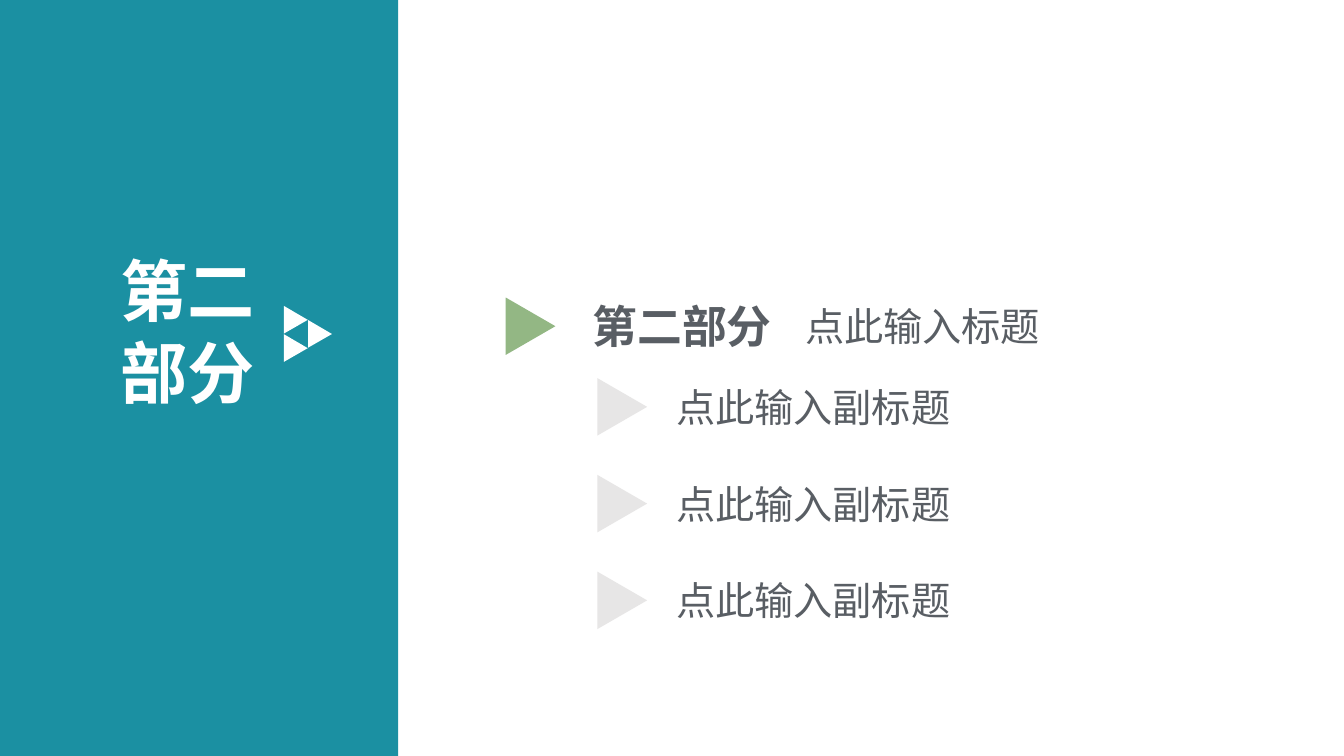
import pptx
import pptx.util
import pptx.dml.color
import pptx.enum.shapes
import pptx.enum.text
import lxml.etree

Pt = pptx.util.Pt
Color = pptx.dml.color.RGBColor
Kind = pptx.enum.shapes.MSO_SHAPE

TEAL = Color(0x1B, 0x90, 0xA2)
WHITE = Color(0xFF, 0xFF, 0xFF)
GREEN = Color(0x93, 0xB7, 0x84)
SLATE = Color(0x59, 0x5E, 0x64)
PALE = Color(0xE7, 0xE6, 0xE6)


class Page:
    font = "Noto Sans CJK SC"

    def __init__(self, slide):
        self.slide = slide

    def shape(self, kind, x, y, w, h, fill, turn=0):
        item = self.slide.shapes.add_shape(kind, Pt(x), Pt(y), Pt(w), Pt(h))
        item.shadow.inherit = False
        item.fill.solid()
        item.fill.fore_color.rgb = fill
        item.line.fill.background()
        item.rotation = turn

    def arrow(self, x, y, fill):
        self.shape(Kind.ISOSCELES_TRIANGLE, x, y, 41, 35.5, fill, 90)

    def text(self, words, x, y, w, h, size, color=SLATE, bold=False, pitch=None):
        box = self.slide.shapes.add_textbox(Pt(x), Pt(y), Pt(w), Pt(h))
        frame = box.text_frame
        frame.word_wrap = True
        frame.vertical_anchor = pptx.enum.text.MSO_ANCHOR.MIDDLE
        frame.margin_top = frame.margin_bottom = 0
        para = frame.paragraphs[0]
        if pitch:
            para.line_spacing = Pt(pitch)
        run = para.add_run()
        run.text = words
        run.font.size = Pt(size)
        run.font.bold = bold
        run.font.color.rgb = color
        run.font.name = self.font
        east = lxml.etree.SubElement(run.font._element, pptx.oxml.ns.qn("a:ea"))
        east.set("typeface", self.font)


def main():
    deck = pptx.Presentation()
    deck.slide_width, deck.slide_height = Pt(960), Pt(540)
    page = Page(deck.slides.add_slide(deck.slide_layouts[6]))

    page.shape(Kind.RECTANGLE, 0, 0, 284.4, 540, TEAL)
    page.text("第二部分", 79.2, 174, 125.3, 124, 48, WHITE, True, 58)
    for x, y in ((197.3, 217.4), (197.3, 237.6), (214.6, 227.5)):
        page.shape(Kind.ISOSCELES_TRIANGLE, x, y, 19.6, 17.1, WHITE, 330.2)

    page.arrow(358.5, 215.3, GREEN)
    page.text("第二部分", 416.2, 208.3, 152, 48, 32, bold=True)
    page.text("点此输入标题", 568, 212, 288, 41, 28)

    for row in range(3):
        top = 270 + row * 69.1
        page.arrow(424, top + 2.9, PALE)
        page.text("点此输入副标题", 475.9, top, 288, 41, 28)

    deck.save("out.pptx")


if __name__ == "__main__":
    main()
